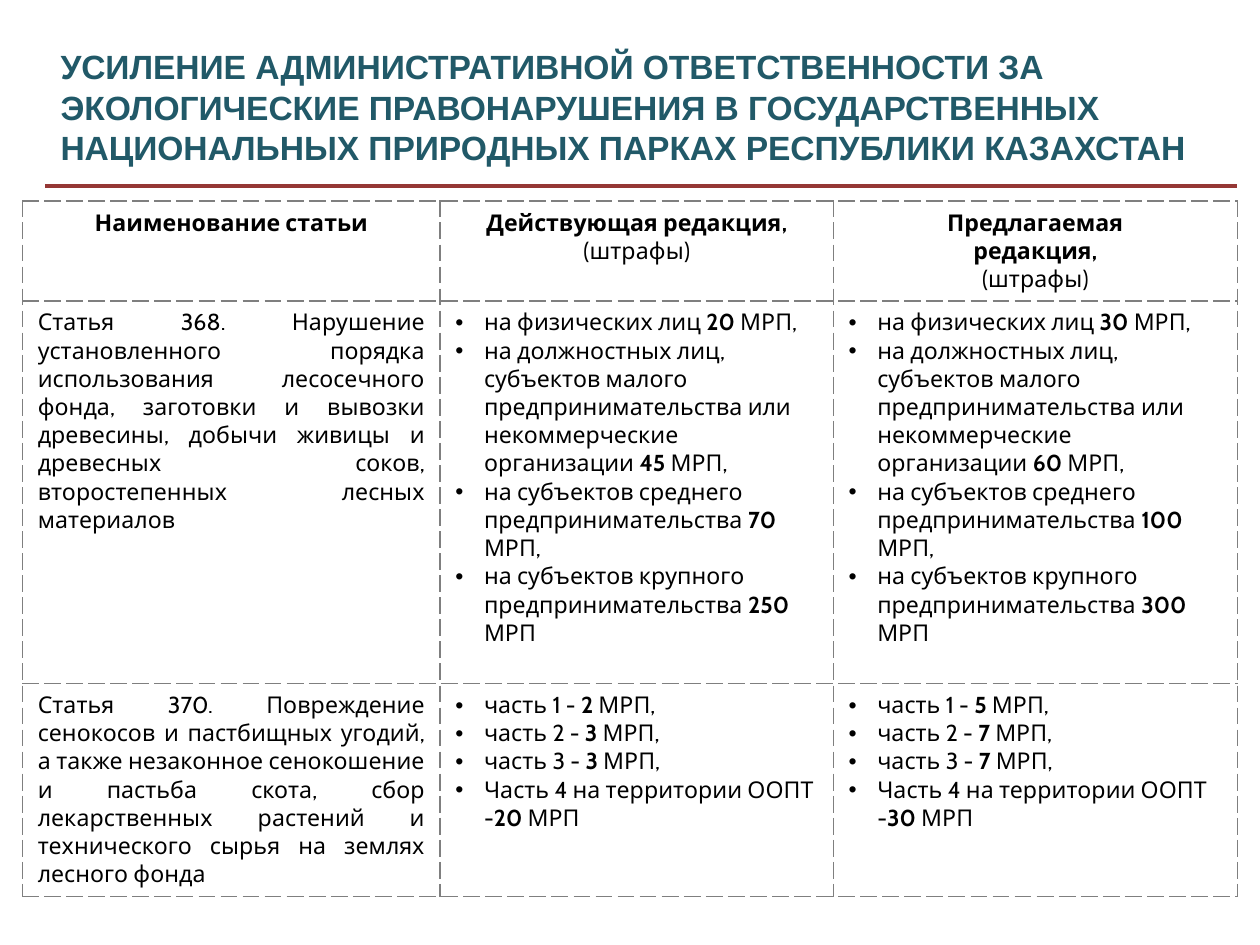
"""Builds a slide comparing current and proposed fines for environmental offences."""
from lxml import etree
from pptx import Presentation
from pptx import util as u
from pptx.dml.color import RGBColor
from pptx.enum import dml, shapes, text
from pptx.oxml import ns

TEAL = RGBColor(0x21, 0x59, 0x68)
RED = RGBColor(0x95, 0x37, 0x35)
GRAY = RGBColor(0x7F, 0x7F, 0x7F)
BLACK = RGBColor(0, 0, 0)
WHITE = RGBColor(0xFF, 0xFF, 0xFF)

TITLE = ("УСИЛЕНИЕ АДМИНИСТРАТИВНОЙ ОТВЕТСТВЕННОСТИ ЗА ЭКОЛОГИЧЕСКИЕ ПРАВОНАРУШЕНИЯ "
         "В ГОСУДАРСТВЕННЫХ НАЦИОНАЛЬНЫХ ПРИРОДНЫХ ПАРКАХ РЕСПУБЛИКИ КАЗАХСТАН")
HEADERS = [
    [["Наименование статьи"], []],
    [["Действующая редакция,"], ["(штрафы)"]],
    [["Предлагаемая", "редакция,"], ["(штрафы)"]],
]
ARTICLES = [
    ("Статья 368. Нарушение установленного порядка использования лесосечного фонда, "
     "заготовки и вывозки древесины, добычи живицы и древесных соков, "
     "второстепенных лесных материалов",
     ["на физических лиц ",
      "на должностных лиц, субъектов малого предпринимательства или "
      "некоммерческие организации ",
      "на субъектов среднего предпринимательства ",
      "на субъектов крупного предпринимательства "],
     [(20, 45, 70, 250), (30, 60, 100, 300)]),
    ("Статья 370. Повреждение сенокосов и пастбищных угодий, а также незаконное "
     "сенокошение и пастьба скота, сбор лекарственных растений и технического сырья "
     "на землях лесного фонда",
     ["часть 1 - ", "часть 2 - ", "часть 3 - ", "Часть 4 на территории ООПТ -"],
     [(2, 3, 3, 20), (5, 7, 7, 30)]),
]
COLUMN_WIDTHS = [2.76, 2.6, 2.67]
ROW_HEIGHTS = [0.66, 2.53, 1.41]


def format_run(run, font_name, size, color, bold):
    """Set the font of one run."""
    run.font.name = font_name
    run.font.size = u.Pt(size)
    run.font.color.rgb = color
    run.font.bold = bold


def add_title(slide):
    """Fill and place the title placeholder."""
    title = slide.shapes.title
    title.left, title.top = u.Inches(0.3), u.Inches(0.27)
    title.width, title.height = u.Inches(7.87), u.Inches(0.87)
    frame = title.text_frame
    frame.text = TITLE
    frame.word_wrap = True
    frame.auto_size = text.MSO_AUTO_SIZE.NONE
    frame.vertical_anchor = text.MSO_ANCHOR.MIDDLE
    paragraph = frame.paragraphs[0]
    paragraph.alignment = text.PP_ALIGN.LEFT
    paragraph.line_spacing = 1.0
    format_run(paragraph.runs[0], "Arial", 16, TEAL, True)


def add_rule(slide):
    """Draw the line under the title."""
    rule = slide.shapes.add_connector(
        shapes.MSO_CONNECTOR.STRAIGHT,
        u.Inches(0.3), u.Inches(1.23), u.Inches(8.18), u.Inches(1.23))
    rule.line.color.rgb = RED
    rule.line.width = u.Pt(1.5)
    properties = rule.element.find(ns.qn("p:spPr"))
    etree.SubElement(properties, ns.qn("a:effectLst"))


def add_borders(cell):
    """Give a cell dashed borders on all four sides."""
    properties = cell._tc.get_or_add_tcPr()
    for position, side in enumerate(("lnL", "lnR", "lnT", "lnB")):
        border = etree.Element(ns.qn(f"a:{side}"), w=str(u.Pt(0.75)))
        fill = etree.SubElement(border, ns.qn("a:solidFill"))
        etree.SubElement(fill, ns.qn("a:srgbClr"), val=str(GRAY))
        etree.SubElement(border, ns.qn("a:prstDash"), val="dash")
        properties.insert(position, border)


def add_bullet(paragraph):
    """Give a paragraph a bullet with a hanging indent."""
    properties = paragraph._p.get_or_add_pPr()
    indent = u.Inches(0.19)
    properties.set("marL", str(indent))
    properties.set("indent", str(-indent))
    etree.SubElement(properties, ns.qn("a:buFont"), typeface="Arial")
    etree.SubElement(properties, ns.qn("a:buChar"), char="•")


def fill_cell(cell, lines, alignment, bulleted=False):
    """Write lines of (text, bold) pieces into a cell."""
    cell.fill.solid()
    cell.fill.fore_color.rgb = WHITE
    add_borders(cell)
    frame = cell.text_frame
    for index, pieces in enumerate(lines):
        paragraph = frame.add_paragraph() if index else frame.paragraphs[0]
        paragraph.alignment = alignment
        if bulleted:
            add_bullet(paragraph)
        for words, bold in pieces:
            run = paragraph.add_run()
            run.text = words
            format_run(run, "Cabin", 11, BLACK, bold)


def add_fines_table(slide):
    """Add the table of articles with current and proposed fines."""
    frame = slide.shapes.add_table(
        len(ROW_HEIGHTS), len(COLUMN_WIDTHS), u.Inches(0.15), u.Inches(1.33),
        u.Inches(sum(COLUMN_WIDTHS)), u.Inches(sum(ROW_HEIGHTS)))
    table = frame.table
    table.first_row = table.horz_banding = False
    for column, width in zip(table.columns, COLUMN_WIDTHS):
        column.width = u.Inches(width)
    for row, height in zip(table.rows, ROW_HEIGHTS):
        row.height = u.Inches(height)

    for column, (bold_lines, plain_lines) in enumerate(HEADERS):
        lines = [[(line, True)] for line in bold_lines]
        lines += [[(line, False)] for line in plain_lines]
        fill_cell(table.cell(0, column), lines, text.PP_ALIGN.CENTER)

    for row, (article, offenders, editions) in enumerate(ARTICLES, 1):
        fill_cell(table.cell(row, 0), [[(article, False)]], text.PP_ALIGN.JUSTIFY)
        for column, fines in enumerate(editions, 1):
            endings = [" МРП,"] * (len(fines) - 1) + [" МРП"]
            lines = [[(offender, False), (str(fine), True), (ending, False)]
                     for offender, fine, ending in zip(offenders, fines, endings)]
            fill_cell(table.cell(row, column), lines, text.PP_ALIGN.LEFT, bulleted=True)


def main():
    """Build and save the presentation."""
    presentation = Presentation()
    presentation.slide_width = u.Inches(8.33)
    presentation.slide_height = u.Inches(6.25)
    slide = presentation.slides.add_slide(presentation.slide_layouts[5])
    slide.background.fill.solid()
    slide.background.fill.fore_color.rgb = WHITE
    add_rule(slide)
    add_title(slide)
    add_fines_table(slide)
    presentation.save("out.pptx")


if __name__ == "__main__":
    main()
